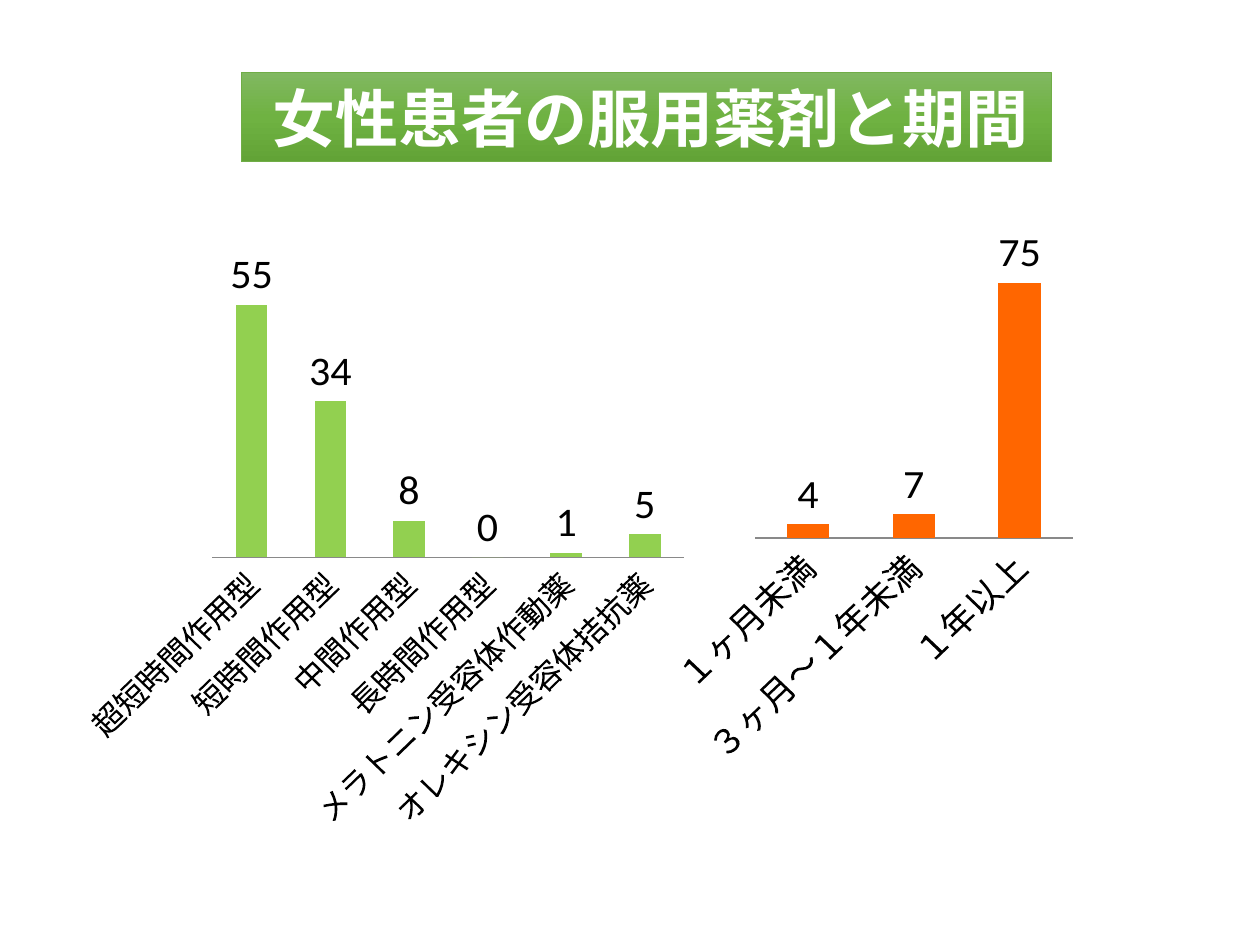
from copy import deepcopy

from pptx import Presentation
from pptx.chart.data import CategoryChartData
from pptx.dml.color import RGBColor
from pptx.enum.chart import XL_CHART_TYPE, XL_LABEL_POSITION, XL_TICK_MARK
from pptx.enum.shapes import MSO_SHAPE
from pptx.enum.text import MSO_ANCHOR, PP_ALIGN
from pptx.oxml.ns import qn
from pptx.util import Inches, Pt

COLUMN_CHART = XL_CHART_TYPE.COLUMN_CLUSTERED
LABEL_ABOVE = XL_LABEL_POSITION.OUTSIDE_END
NO_TICK = XL_TICK_MARK.NONE
RECTANGLE = MSO_SHAPE.RECTANGLE
MIDDLE = MSO_ANCHOR.MIDDLE
LEFT = PP_ALIGN.LEFT

TITLE_ONLY = 5
COLUMNS, ROWS = 100, 75
COLORS = {
    "banner_top": "81B861",
    "banner_middle": "6FB242",
    "banner_bottom": "62A336",
    "banner_line": "70AD47",
    "title": "FFFFFF",
    "text": "000000",
    "axis": "898989",
    "drug": "92D050",
    "period": "FF6600",
}


def rgb(name):
    return RGBColor.from_string(COLORS[name])


class SlideBuilder:
    """Places styled elements on a 100 by 75 grid; boxes are (column, row, columns, rows)."""

    font = "Calibri"
    label_size = 24

    def __init__(self, presentation):
        self.cell_width = presentation.slide_width / COLUMNS
        self.cell_height = presentation.slide_height / ROWS
        self.slide = presentation.slides.add_slide(presentation.slide_layouts[TITLE_ONLY])

    def place(self, box):
        cells = (self.cell_width, self.cell_height) * 2
        return [round(count * cell) for count, cell in zip(box, cells)]

    def title(self, text, box, size):
        shape = self.slide.shapes.title
        shape.left, shape.top, shape.width, shape.height = self.place(box)
        frame = shape.text_frame
        frame.word_wrap = True
        frame.vertical_anchor = MIDDLE
        paragraph = frame.paragraphs[0]
        paragraph.alignment = LEFT
        run = paragraph.add_run()
        run.text = text
        run.font.name = self.font
        run.font.size = Pt(size)
        run.font.bold = True
        run.font.color.rgb = rgb("title")

    def banner(self, box, stop_colors):
        """Adds a vertical gradient rectangle behind the title."""
        shape = self.slide.shapes.add_shape(RECTANGLE, *self.place(box))
        shape.shadow.inherit = False
        shape.fill.gradient()
        shape.fill.gradient_angle = 270
        stop_list = shape.element.find(".//" + qn("a:gsLst"))
        stop_list.append(deepcopy(stop_list[-1]))
        for index, (stop, color) in enumerate(zip(shape.fill.gradient_stops, stop_colors)):
            stop.position = index / (len(stop_colors) - 1)
            stop.color.rgb = rgb(color)
        shape.line.color.rgb = rgb("banner_line")
        shape.line.width = Pt(0.5)
        self.slide.shapes.title.element.addprevious(shape.element)

    def column_chart(self, box, values, color, axis_font, axis_size):
        data = CategoryChartData()
        data.categories = list(values)
        data.add_series("Series 1", list(values.values()))
        chart = self.slide.shapes.add_chart(COLUMN_CHART, *self.place(box), data).chart
        chart.has_legend = False
        chart.has_title = False
        chart.font.name = self.font
        chart.font.size = Pt(10)
        chart.font.color.rgb = rgb("text")

        value_axis = chart.value_axis
        value_axis.visible = False
        value_axis.has_major_gridlines = False
        value_axis.minimum_scale = 0

        category_axis = chart.category_axis
        category_axis.major_tick_mark = NO_TICK
        category_axis.format.line.color.rgb = rgb("axis")
        axis_text = category_axis.tick_labels.font
        axis_text.name = axis_font
        axis_text.size = Pt(axis_size)
        axis_text.color.rgb = rgb("text")
        axis_body = chart.element.find(".//" + qn("c:catAx")).find(".//" + qn("a:bodyPr"))
        axis_body.set("rot", "-2700000")

        bars = chart.plots[0]
        bars.gap_width = 150
        bars.vary_by_categories = False
        fill = bars.series[0].format.fill
        fill.solid()
        fill.fore_color.rgb = rgb(color)
        bars.has_data_labels = True
        labels = bars.data_labels
        labels.show_value = True
        labels.position = LABEL_ABOVE
        labels.font.name = self.font
        labels.font.size = Pt(self.label_size)
        labels.font.color.rgb = rgb("text")


def main():
    presentation = Presentation()
    presentation.slide_width = Inches(10)
    presentation.slide_height = Inches(7.5)

    builder = SlideBuilder(presentation)
    builder.title("女性患者の服用薬剤と期間", (20.6, 5.75, 62.8, 7.1), 36)
    builder.banner((19.15, 5.75, 64.3, 7.1), ("banner_top", "banner_middle", "banner_bottom"))

    drugs = {
        "超短時間作用型": 55,
        "短時間作用型": 34,
        "中間作用型": 8,
        "長時間作用型": 0,
        "メラトニン受容体作動薬": 1,
        "オレキシン受容体拮抗薬": 5,
    }
    periods = {"１ヶ月未満": 4, "３ヶ月～１年未満": 7, "１年以上": 75}
    builder.column_chart((5.3, 19.9, 50, 46.9), drugs, "drug", "DejaVu Sans Mono", 18)
    builder.column_chart((52, 18.2, 33.8, 43.6), periods, "period", builder.font, 20)

    presentation.save("out.pptx")


if __name__ == "__main__":
    main()
